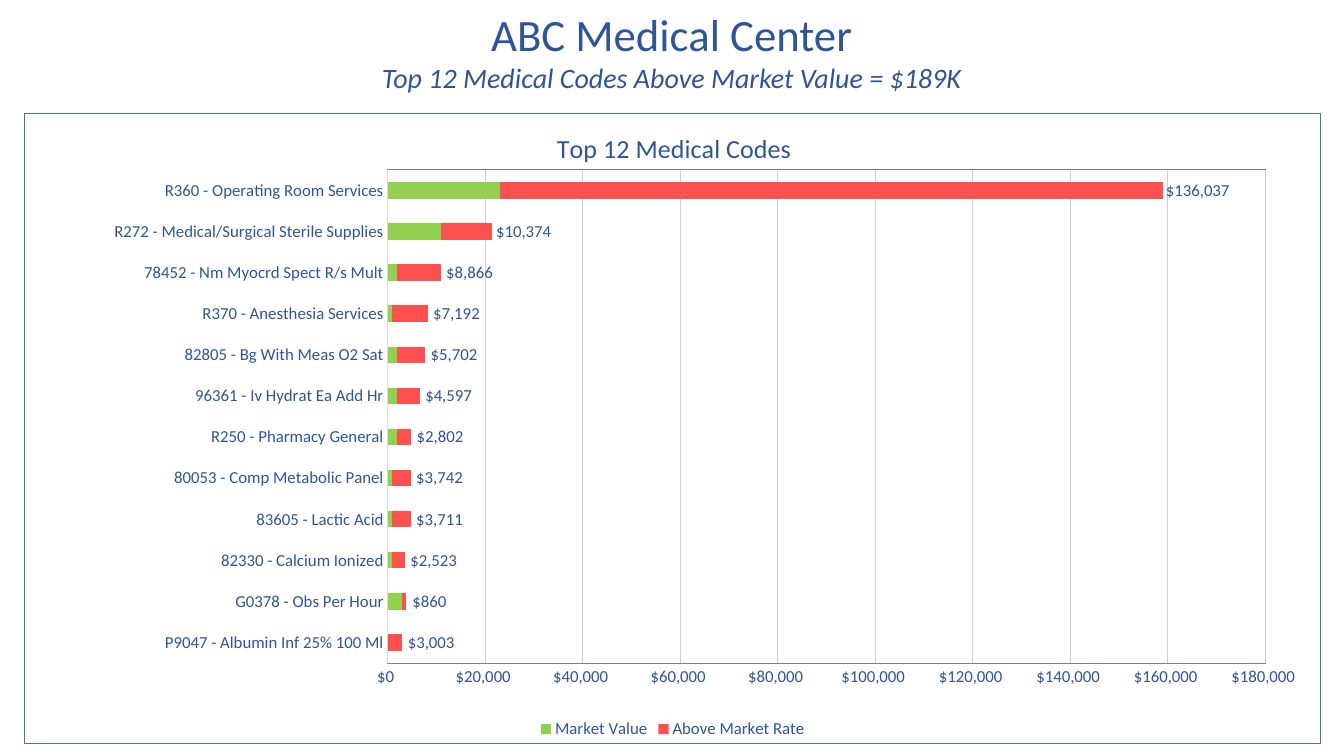
from copy import deepcopy

from pptx import Presentation
from pptx.chart.data import CategoryChartData
from pptx.dml.color import RGBColor
from pptx.enum.chart import XL_CHART_TYPE, XL_LEGEND_POSITION, XL_TICK_MARK
from pptx.enum.text import MSO_ANCHOR, MSO_AUTO_SIZE, PP_ALIGN
from pptx.oxml import parse_xml
from pptx.oxml.ns import nsdecls
from pptx.util import Cm, Pt

AXIS_MAX = 180000
PLOT_WIDTH = 0.677
CODES = [
    ("P9047 - Albumin Inf 25% 100 Ml", 0, 3003),
    ("G0378 - Obs Per Hour", 3000, 860),
    ("82330 - Calcium Ionized", 1000, 2523),
    ("83605 - Lactic Acid", 1000, 3711),
    ("80053 - Comp Metabolic Panel", 1000, 3742),
    ("R250 - Pharmacy General", 2000, 2802),
    ("96361 - Iv Hydrat Ea Add Hr", 2000, 4597),
    ("82805 - Bg With Meas O2 Sat", 2000, 5702),
    ("R370 - Anesthesia Services", 1000, 7192),
    ("78452 - Nm Myocrd Spect R/s Mult", 2000, 8866),
    ("R272 - Medical/Surgical Sterile Supplies", 11000, 10374),
    ("R360 - Operating Room Services", 23000, 136037),
]


def rgb(color):
    return RGBColor.from_string(color)


def outline(color):
    return parse_xml(
        f'<c:spPr {nsdecls("c", "a")}><a:noFill/><a:ln w="{Pt(0.75)}"><a:solidFill>'
        f'<a:srgbClr val="{color}"/></a:solidFill></a:ln></c:spPr>')


def set_layout(parent, index, **parts):
    for old in parent.findall("{*}layout"):
        parent.remove(old)
    body = "".join(f'<c:{tag} val="{val}"/>' for tag, val in parts.items())
    parent.insert(index, parse_xml(
        f'<c:layout {nsdecls("c")}><c:manualLayout>{body}</c:manualLayout></c:layout>'))


def hide_leader_lines(labels):
    for old in labels.findall("{*}showLeaderLines"):
        labels.remove(old)
    labels.append(parse_xml(f'<c:showLeaderLines {nsdecls("c")} val="0"/>'))
    labels.append(parse_xml(
        f'<c:extLst {nsdecls("c")}><c:ext uri="{{CE6537A1-D6FC-4f65-9D91-7224C49458BB}}" '
        'xmlns:c15="http://schemas.microsoft.com/office/drawing/2012/chart">'
        '<c15:showLeaderLines val="0"/></c:ext></c:extLst>'))


class SlideBuilder:
    """Hold the style and the current slide."""

    font = "Calibri"
    ink = "2F5597"

    def __init__(self, prs):
        self.s = prs.slides.add_slide(prs.slide_layouts[5])

    def style(self, font, size, italic=False):
        font.name, font.size = self.font, Pt(size)
        font.bold, font.italic = False, italic
        font.color.rgb = rgb(self.ink)

    def title(self, box, lines):
        sp = self.s.shapes.title
        sp.left, sp.top, sp.width, sp.height = map(Cm, box)
        tf = sp.text_frame
        tf.text = "\n".join(text for text, _, _ in lines)
        tf.word_wrap = True
        tf.auto_size = MSO_AUTO_SIZE.SHAPE_TO_FIT_TEXT
        tf.vertical_anchor = MSO_ANCHOR.TOP
        for p, (_, size, italic) in zip(tf.paragraphs, lines):
            p.alignment = PP_ALIGN.CENTER
            self.style(p.runs[0].font, size, italic)

    def stacked_bars(self, box, title, rows, series):
        data = CategoryChartData()
        data.categories = [row[0] for row in rows]
        for i, (name, _) in enumerate(series, 1):
            data.add_series(name, [row[i] for row in rows])
        chart = self.s.shapes.add_chart(
            XL_CHART_TYPE.BAR_STACKED, *map(Cm, box), data).chart
        self.style(chart.font, 10)
        chart._chartSpace.chart.addnext(outline("4472C4"))

        tf = chart.chart_title.text_frame
        tf.text = title
        self.style(tf.paragraphs[0].runs[0].font, 18.6)
        set_layout(chart.chart_title._element, 1,
                   xMode="edge", yMode="edge", x=0.407, y=0.02)

        chart.has_legend = True
        chart.legend.position = XL_LEGEND_POSITION.BOTTOM
        chart.legend.include_in_layout = False
        self.style(chart.legend.font, 12)

        plot = chart.plots[0]
        plot.gap_width, plot.overlap, plot.vary_by_categories = 150, 100, False
        for bar, (_, color) in zip(plot.series, series):
            bar.format.fill.solid()
            bar.format.fill.fore_color.rgb = rgb(color)
            bar.invert_if_negative = False
        self.axes(chart)
        self.end_labels(plot.series[1])
        area = chart._chartSpace.chart.plotArea
        set_layout(area, 0, layoutTarget="inner", xMode="edge", yMode="edge",
                   x=0.28, y=0.09, w=PLOT_WIDTH, h=0.783)
        area.append(outline("7F7F7F"))

    def axes(self, chart):
        cat, val = chart.category_axis, chart.value_axis
        for axis in (cat, val):
            axis.major_tick_mark = axis.minor_tick_mark = XL_TICK_MARK.NONE
            self.style(axis.tick_labels.font, 12)
        val.minimum_scale, val.maximum_scale, val.major_unit = 0, AXIS_MAX, 20000
        val.tick_labels.number_format = '"$"#,##0_);[Red]\\("$"#,##0\\)'
        val.tick_labels.number_format_is_linked = False
        val.format.line.fill.background()
        val.has_major_gridlines = True
        for line, color in ((cat.format.line, "D9D9D9"),
                            (val.major_gridlines.format.line, "D0CECE")):
            line.color.rgb = rgb(color)
            line.width = Pt(0.75)

    def end_labels(self, bar):
        labels = bar.data_labels
        labels.show_value = True
        labels.number_format = '"$"#,##0'
        labels.number_format_is_linked = False
        self.style(labels.font, 12)
        base = [el for el in labels._element if not el.tag.endswith("LeaderLines")]
        for i, value in enumerate(bar.values):
            half_bar = value / AXIS_MAX * PLOT_WIDTH / 2
            half_text = 0.0085 + 0.0023 * len(f"${value:,.0f}")
            label = parse_xml(f'<c:dLbl {nsdecls("c")}><c:idx val="{i}"/></c:dLbl>')
            set_layout(label, 1, x=round(half_bar + half_text, 4), y=0)
            label.extend(deepcopy(el) for el in base)
            labels._element.insert(i, label)
        hide_leader_lines(labels._element)


def main():
    prs = Presentation()
    prs.slide_width, prs.slide_height = Cm(33.87), Cm(19.05)
    slide = SlideBuilder(prs)
    slide.title((3.66, 0.05, 26.54, 2.49), [
        ("ABC Medical Center", 32, False),
        ("Top 12 Medical Codes Above Market Value = $189K", 20, True)])
    slide.stacked_bars((0.61, 2.84, 32.69, 15.9), "Top 12 Medical Codes", CODES, [
        ("Market Value", "92D050"), ("Above Market Rate", "FF5050")])
    prs.save("out.pptx")


if __name__ == "__main__":
    main()
